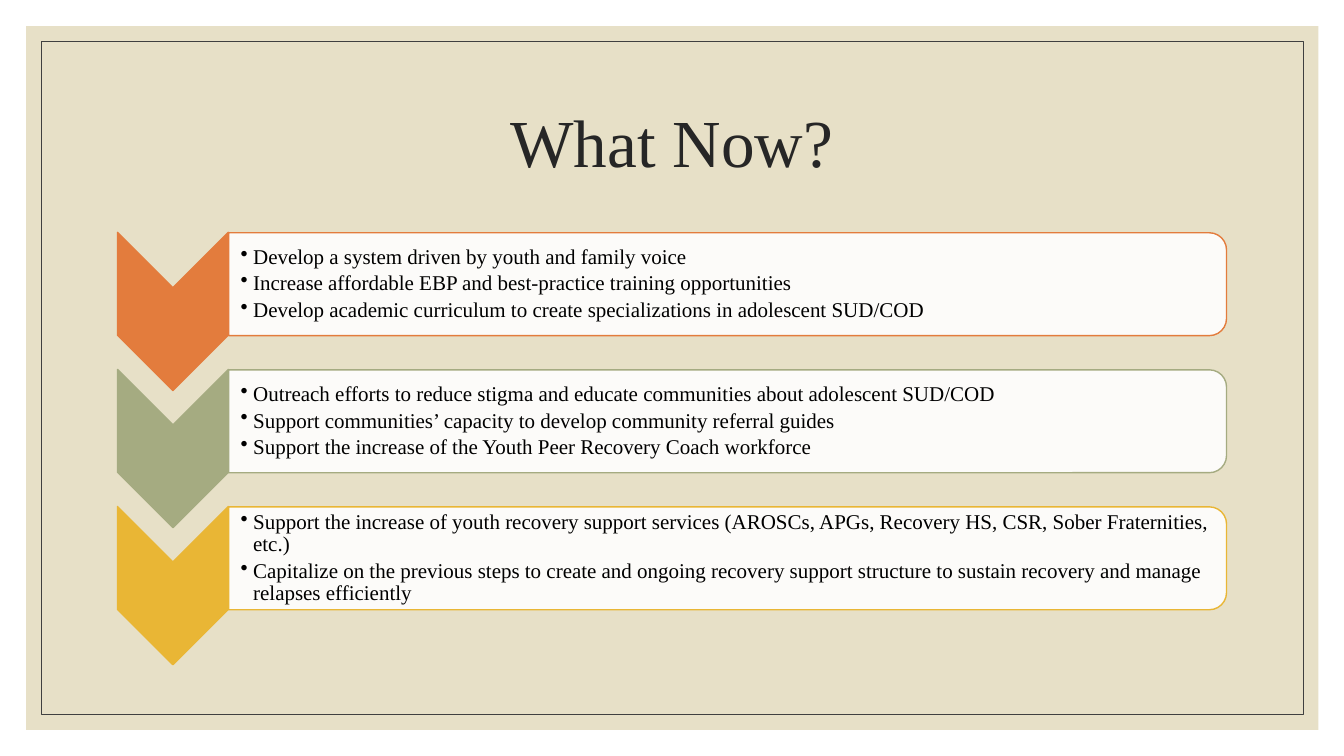
from dataclasses import dataclass

from lxml.etree import SubElement
from pptx import Presentation
from pptx.dml.color import RGBColor
from pptx.enum.shapes import MSO_SHAPE as Shape
from pptx.enum.text import MSO_ANCHOR as Anchor, PP_ALIGN as Align
from pptx.oxml.ns import qn
from pptx.util import Pt


@dataclass(frozen=True)
class Theme:
    font: str = "Times New Roman"
    title_size: float = 48
    list_size: float = 15
    title_color: str = "262626"
    list_color: str = "000000"
    panel: str = "E7E0C7"
    border: str = "404040"
    bar: str = "FFFFFF"
    bar_opacity: int = 90
    accents: tuple = ("E37C3D", "A5AB81", "E9B635")


STEPS = [
    [
        "Develop a system driven by youth and family voice",
        "Increase affordable EBP and best-practice training opportunities",
        "Develop academic curriculum to create specializations in adolescent SUD/COD",
    ],
    [
        "Outreach efforts to reduce stigma and educate communities about adolescent SUD/COD",
        "Support communities’ capacity to develop community referral guides",
        "Support the increase of the Youth Peer Recovery Coach workforce",
    ],
    [
        "Support the increase of youth recovery support services "
        "(AROSCs, APGs, Recovery HS, CSR, Sober Fraternities, etc.)",
        "Capitalize on the previous steps to create and ongoing recovery support "
        "structure to sustain recovery and manage relapses efficiently",
    ],
]

FIRST_BAR_CENTER = 203
STEP_PITCH = 97.9
CHEVRON_DROP = 19.5


class Page:
    def __init__(self, slide, theme):
        self.slide = slide
        self.theme = theme

    def shape(self, kind, left, top, width, height, fill=None, line=None, weight=1):
        item = self.slide.shapes.add_shape(kind, Pt(left), Pt(top), Pt(width), Pt(height))
        item.shadow.inherit = False
        if fill:
            item.fill.solid()
            item.fill.fore_color.rgb = RGBColor.from_string(fill)
        else:
            item.fill.background()
        if line:
            item.line.color.rgb = RGBColor.from_string(line)
            item.line.width = Pt(weight)
        else:
            item.line.fill.background()
        return item

    def turned(self, kind, center_x, center_y, width, height, fill, line):
        """Add a shape turned a quarter clockwise; width and height are as before the turn."""
        item = self.shape(kind, center_x - width / 2, center_y - height / 2,
                          width, height, fill, line)
        item.rotation = 90
        return item

    def style(self, para, size, color):
        para.line_spacing = 0.9
        para.font.name = self.theme.font
        para.font.size = Pt(size)
        para.font.color.rgb = RGBColor.from_string(color)

    def title(self, text, left, top, width, height):
        box = self.slide.shapes.title
        box.left, box.top, box.width, box.height = map(Pt, (left, top, width, height))
        box.element.getparent().append(box.element)  # in front of the panel
        box.text_frame.text = text
        box.text_frame.vertical_anchor = Anchor.MIDDLE
        para = box.text_frame.paragraphs[0]
        para.alignment = Align.CENTER
        self.style(para, self.theme.title_size, self.theme.title_color)

    def bullets(self, items, left, top, width, height):
        frame = self.slide.shapes.add_textbox(Pt(left), Pt(top), Pt(width), Pt(height)).text_frame
        frame.word_wrap = True
        frame.vertical_anchor = Anchor.MIDDLE
        frame.margin_left = Pt(8.5)
        frame.margin_top = frame.margin_right = frame.margin_bottom = Pt(0.75)
        frame.text = "\n".join(items)
        for para in frame.paragraphs:
            self.style(para, self.theme.list_size, self.theme.list_color)
            para.space_after = Pt(2.5)
            props = para._p.get_or_add_pPr()
            props.set("marL", str(Pt(9)))
            props.set("indent", str(-Pt(9)))
            SubElement(props, qn("a:buChar")).set("char", "•")

    def step(self, items, center_y, accent):
        self.turned(Shape.CHEVRON, 123.5, center_y + CHEVRON_DROP, 113, 79.2, accent, accent)
        bar = self.turned(Shape.ROUND_2_SAME_RECTANGLE, 519.7, center_y, 73.5, 712.8,
                          self.theme.bar, accent)
        color = bar.fill._xPr.find(qn("a:solidFill"))[0]
        SubElement(color, qn("a:alpha")).set("val", str(self.theme.bar_opacity * 1000))
        self.bullets(items, 163.3, center_y - 33.2, 709.2, 66.4)


def main():
    theme = Theme()
    deck = Presentation()
    deck.slide_width, deck.slide_height = Pt(960), Pt(540)
    page = Page(deck.slides.add_slide(deck.slide_layouts[5]), theme)

    page.shape(Shape.RECTANGLE, 18.7, 18.7, 923, 502.6, fill=theme.panel)
    page.shape(Shape.RECTANGLE, 29.5, 29.5, 901.4, 481, line=theme.border, weight=0.5)
    page.title("What Now?", 84, 50.4, 792, 108)
    for index, (items, accent) in enumerate(zip(STEPS, theme.accents)):
        page.step(items, FIRST_BAR_CENTER + index * STEP_PITCH, accent)

    deck.save("out.pptx")


if __name__ == "__main__":
    main()
